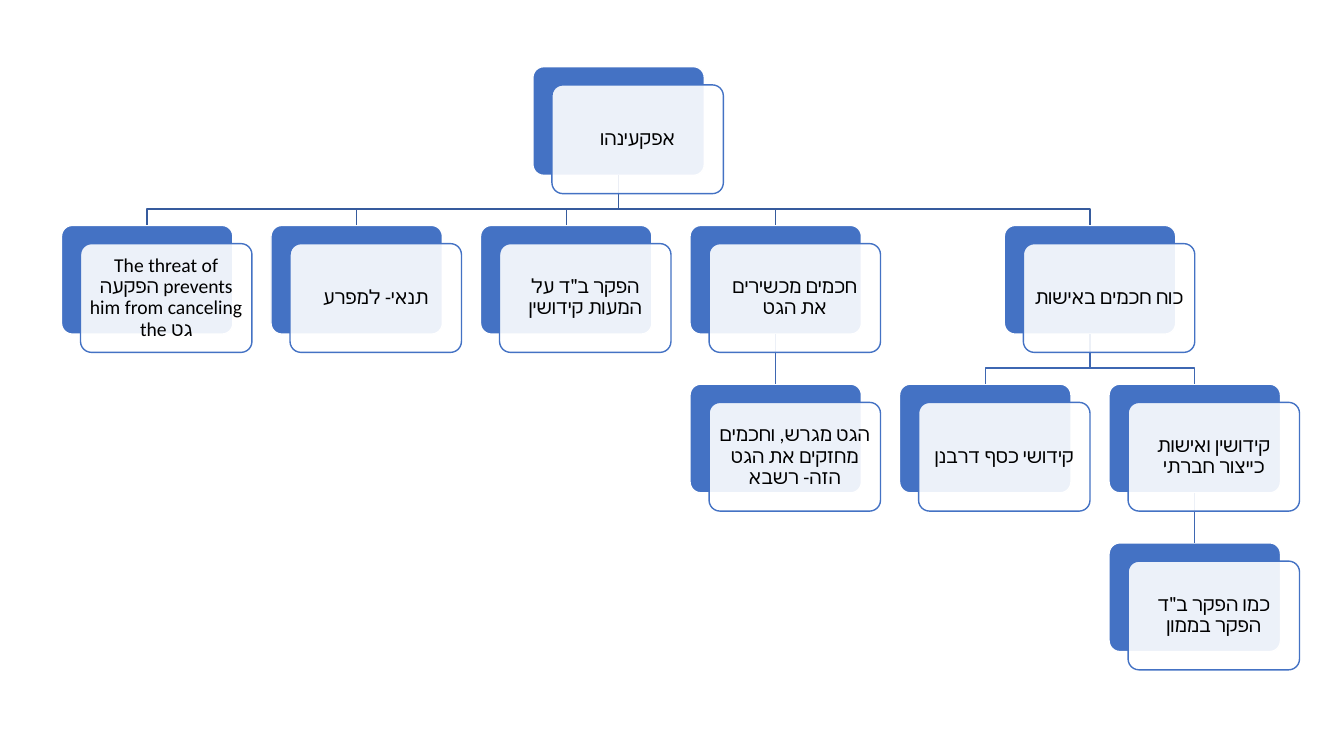
from dataclasses import dataclass

from lxml import etree
from pptx import Presentation
from pptx.dml.color import RGBColor
from pptx.enum.shapes import MSO_CONNECTOR, MSO_SHAPE
from pptx.enum.text import MSO_ANCHOR, PP_ALIGN
from pptx.oxml.ns import qn
from pptx.util import Cm, Pt

ROUNDED = MSO_SHAPE.ROUNDED_RECTANGLE
STRAIGHT = MSO_CONNECTOR.STRAIGHT
CENTER = PP_ALIGN.CENTER
MIDDLE = MSO_ANCHOR.MIDDLE
TOP_SITE, BOTTOM_SITE = 0, 2


@dataclass(frozen=True)
class Theme:
    blue: RGBColor = RGBColor(0x44, 0x72, 0xC4)
    root_link: RGBColor = RGBColor(0x36, 0x5B, 0x9D)
    lower_link: RGBColor = RGBColor(0x3E, 0x67, 0xB2)
    white: RGBColor = RGBColor(0xFF, 0xFF, 0xFF)
    black: RGBColor = RGBColor(0, 0, 0)
    card_opacity: int = 90
    font: str = "Calibri"
    text_size: Pt = Pt(14)
    line_width: Pt = Pt(1)


THEME = Theme()

CHART_LEFT, CHART_TOP = Cm(1.55), Cm(1.68)
COLUMN_STEP, ROW_STEP = Cm(5.28), Cm(4)
BOX_WIDTH, BOX_HEIGHT = Cm(4.32), Cm(2.74)
CARD_SHIFT_X, CARD_SHIFT_Y = Cm(0.48), Cm(0.46)
BEND_DROP = Cm(0.85)
TEXT_INSET = Cm(0.15)

# key: (column, row, parent key, text)
NODES = {
    "root": (2.25, 0, None, "אפקעינהו"),
    "threat": (0, 1, "root", "The threat of הפקעה prevents him from canceling the\u00a0גט"),
    "condition": (1, 1, "root", "תנאי- למפרע"),
    "money": (2, 1, "root", "הפקר ב״ד על המעות קידושין"),
    "approval": (3, 1, "root", "חכמים מכשירים את הגט"),
    "strengthening": (3, 2, "approval", "הגט מגרש, וחכמים מחזקים את הגט הזה- רשבא"),
    "power": (4.5, 1, "root", "כוח\u00a0חכמים באישות"),
    "silver": (4, 2, "power", "קידושי כסף דרבנן"),
    "social": (5, 2, "power", "קידושין ואישות כייצור חברתי"),
    "property": (5, 3, "social", "כמו הפקר ב״ד הפקר בממון"),
}


def add_rounded_box(slide, left, top, fill, outline):
    shape = slide.shapes.add_shape(ROUNDED, left, top, BOX_WIDTH, BOX_HEIGHT)
    shape.adjustments[0] = 0.1
    shape.shadow.inherit = False
    shape.fill.solid()
    shape.fill.fore_color.rgb = fill
    shape.line.color.rgb = outline
    shape.line.width = THEME.line_width
    return shape


def add_backing(slide, column, row):
    left = CHART_LEFT + round(column * COLUMN_STEP)
    top = CHART_TOP + row * ROW_STEP
    return add_rounded_box(slide, left, top, THEME.blue, THEME.white)


def add_card(slide, backing, text):
    """Lay the translucent text card over its blue backing."""
    card = add_rounded_box(
        slide, backing.left + CARD_SHIFT_X, backing.top + CARD_SHIFT_Y, THEME.white, THEME.blue
    )
    color = card.fill._xPr.find(qn("a:solidFill"))[0]
    etree.SubElement(color, qn("a:alpha"), val=str(THEME.card_opacity * 1000))
    write_text(card.text_frame, text)


def write_text(text_frame, text):
    text_frame.text = text
    text_frame.word_wrap = True
    text_frame.vertical_anchor = MIDDLE
    text_frame.margin_left = text_frame.margin_right = TEXT_INSET
    text_frame.margin_top = text_frame.margin_bottom = TEXT_INSET
    paragraph = text_frame.paragraphs[0]
    paragraph.alignment = CENTER
    paragraph.line_spacing = 0.9
    font = paragraph.runs[0].font
    font.size = THEME.text_size
    font.color.rgb = THEME.black
    font.name = THEME.font
    etree.SubElement(font._element, qn("a:cs"), typeface=THEME.font)


def add_straight_link(slide, parent, child):
    link = slide.shapes.add_connector(STRAIGHT, 0, 0, 0, 0)
    link.begin_connect(parent, BOTTOM_SITE)
    link.end_connect(child, TOP_SITE)
    etree.SubElement(link._element.spPr, qn("a:effectLst"))
    return link


def add_bent_link(slide, parent, child):
    start_x = parent.left + BOX_WIDTH // 2
    start_y = parent.top + BOX_HEIGHT
    end_x = child.left + BOX_WIDTH // 2
    bend_y = start_y + BEND_DROP
    builder = slide.shapes.build_freeform(start_x, start_y)
    builder.add_line_segments(
        [(start_x, bend_y), (end_x, bend_y), (end_x, child.top)], close=False
    )
    link = builder.convert_to_shape()
    link.fill.background()
    link.shadow.inherit = False
    return link


def add_link(slide, parent, child, color):
    add = add_straight_link if parent.left == child.left else add_bent_link
    link = add(slide, parent, child)
    link.line.color.rgb = color
    link.line.width = THEME.line_width


def main():
    presentation = Presentation()
    presentation.slide_width, presentation.slide_height = Cm(33.87), Cm(19.05)
    slide = presentation.slides.add_slide(presentation.slide_layouts[6])

    # The links run behind the cards, so the layers are added in this order.
    backings = {
        key: add_backing(slide, column, row) for key, (column, row, _, _) in NODES.items()
    }
    for key, (_, _, parent, _) in NODES.items():
        if parent:
            color = THEME.root_link if parent == "root" else THEME.lower_link
            add_link(slide, backings[parent], backings[key], color)
    for key, (_, _, _, text) in NODES.items():
        add_card(slide, backings[key], text)

    presentation.save("out.pptx")


if __name__ == "__main__":
    main()
